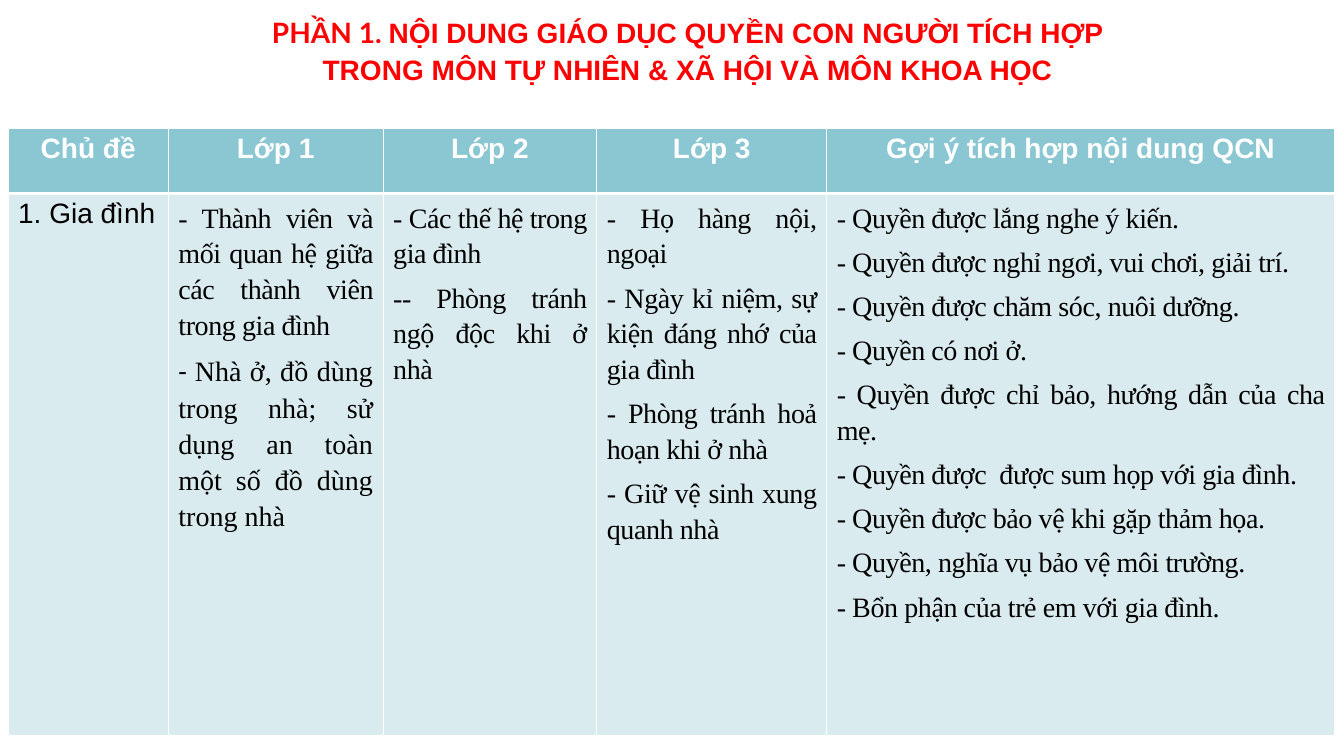
from dataclasses import dataclass

from lxml import etree
from pptx import Presentation
from pptx.dml.color import RGBColor
from pptx.enum.text import MSO_ANCHOR, MSO_AUTO_SIZE, PP_ALIGN
from pptx.oxml.ns import qn
from pptx.util import Inches, Pt

LEFT, CENTER, JUSTIFY = PP_ALIGN.LEFT, PP_ALIGN.CENTER, PP_ALIGN.JUSTIFY
TOP = MSO_ANCHOR.TOP
NO_AUTOFIT = MSO_AUTO_SIZE.NONE
TITLE_ONLY = 5


@dataclass(frozen=True)
class Theme:
    title: str = "FF0000"
    header: str = "8AC7D3"
    body: str = "DAEBEF"
    light: str = "FFFFFF"
    dark: str = "000000"
    size: float = 20
    tight: float = -0.3
    title_font: str = "Lato"
    sans: str = "Arial"
    serif: str = "Times New Roman"
    dash_font: str = "Calibri"


THEME = Theme()

COLUMN_WIDTHS = [1.59, 2.13, 2.12, 2.28, 5.04]
ROW_HEIGHTS = [0.65, 5.38]
HEADERS = ["Chủ đề", "Lớp 1", "Lớp 2", "Lớp 3", "Gợi ý tích hợp nội dung QCN"]
TOPIC = "1. Gia đình"
HOUSING = "Nhà ở, đồ dùng trong nhà; sử dụng an toàn một số đồ dùng trong nhà"
CONTENTS = [
    ["- Thành viên và mối quan hệ giữa các thành viên trong gia đình"],
    ["- Các thế hệ trong gia đình", "-- Phòng tránh ngộ độc khi ở nhà"],
    [
        "- Họ hàng nội, ngoại",
        "- Ngày kỉ niệm, sự kiện đáng nhớ của gia đình",
        "- Phòng tránh hoả hoạn khi ở nhà",
        "- Giữ vệ sinh xung quanh nhà",
    ],
    [
        "- Quyền được lắng nghe ý kiến.",
        "- Quyền được nghỉ ngơi, vui chơi, giải trí.",
        "- Quyền được chăm sóc, nuôi dưỡng.",
        "- Quyền có nơi ở.",
        "- Quyền được chỉ bảo, hướng dẫn của cha mẹ.",
        "- Quyền được  được sum họp với gia đình.",
        "- Quyền được bảo vệ khi gặp thảm họa.",
        "- Quyền, nghĩa vụ bảo vệ môi trường.",
        "- Bổn phận của trẻ em với gia đình.",
    ],
]


def add_run(p, text, font=THEME.sans, color=THEME.dark, bold=False, spacing=0):
    r = p.add_run()
    r.text = text
    r.font.name = font
    r.font.size = Pt(THEME.size)
    r.font.bold = bold
    r.font.color.rgb = RGBColor.from_string(color)
    if spacing:
        r._r.get_or_add_rPr().set("spc", str(round(spacing * 100)))


def format_paragraph(p, align=LEFT, line=1.0, before=0, after=0):
    p.alignment = align
    p.line_spacing = line
    p.space_before = Pt(before)
    p.space_after = Pt(after)


def add_item(tf, first=False):
    p = tf.paragraphs[0] if first else tf.add_paragraph()
    format_paragraph(p, JUSTIFY, 1.15, before=0 if first else 3, after=3)
    return p


def add_items(cell, items):
    for i, text in enumerate(items):
        p = add_item(cell.text_frame, first=i == 0)
        add_run(p, text, font=THEME.serif, spacing=THEME.tight)


def style_cell(cell, color, top=1, bottom=1):
    cell.fill.solid()
    cell.fill.fore_color.rgb = RGBColor.from_string(color)
    tcPr = cell._tc.get_or_add_tcPr()
    borders = [("a:lnL", 1), ("a:lnR", 1), ("a:lnT", top), ("a:lnB", bottom)]
    for i, (tag, width) in enumerate(borders):
        ln = etree.Element(qn(tag), w=str(Pt(width)))
        fill = etree.SubElement(ln, qn("a:solidFill"))
        etree.SubElement(fill, qn("a:srgbClr"), val=THEME.light)
        tcPr.insert(i, ln)


def add_title(slide):
    sp = slide.shapes.title
    sp.left, sp.top = Inches(2.44), Inches(0.07)
    sp.width, sp.height = Inches(8.76), Inches(1.56)
    tf = sp.text_frame
    tf.word_wrap = True
    tf.auto_size = NO_AUTOFIT
    tf.vertical_anchor = TOP
    p = tf.paragraphs[0]
    format_paragraph(p, CENTER, 1.1)
    add_run(p, "PHẦN 1. ", font=THEME.title_font, color=THEME.title, bold=True)
    add_run(
        p,
        "NỘI DUNG GIÁO DỤC QUYỀN CON NGƯỜI TÍCH HỢP "
        "TRONG MÔN TỰ NHIÊN & XÃ HỘI VÀ MÔN KHOA HỌC",
        color=THEME.title,
        bold=True,
    )


def add_topic_table(slide):
    frame = slide.shapes.add_table(
        len(ROW_HEIGHTS), len(COLUMN_WIDTHS),
        Inches(0.08), Inches(1.27),
        Inches(sum(COLUMN_WIDTHS)), Inches(sum(ROW_HEIGHTS)),
    )
    table = frame.table
    for column, width in zip(table.columns, COLUMN_WIDTHS):
        column.width = Inches(width)
    for row, height in zip(table.rows, ROW_HEIGHTS):
        row.height = Inches(height)

    for i, text in enumerate(HEADERS):
        header = table.cell(0, i)
        style_cell(header, THEME.header, bottom=3)
        style_cell(table.cell(1, i), THEME.body, top=3)
        p = header.text_frame.paragraphs[0]
        format_paragraph(p, CENTER)
        add_run(p, text, color=THEME.light, bold=True)

    p = table.cell(1, 0).text_frame.paragraphs[0]
    format_paragraph(p)
    add_run(p, TOPIC)
    for i, items in enumerate(CONTENTS, start=1):
        add_items(table.cell(1, i), items)

    p = add_item(table.cell(1, 1).text_frame)
    add_run(p, "- ", font=THEME.dash_font)
    add_run(p, HOUSING, font=THEME.serif)


def main():
    prs = Presentation()
    prs.slide_width, prs.slide_height = Inches(13.33), Inches(7.5)
    slide = prs.slides.add_slide(prs.slide_layouts[TITLE_ONLY])
    add_title(slide)
    add_topic_table(slide)
    prs.save("out.pptx")


if __name__ == "__main__":
    main()
